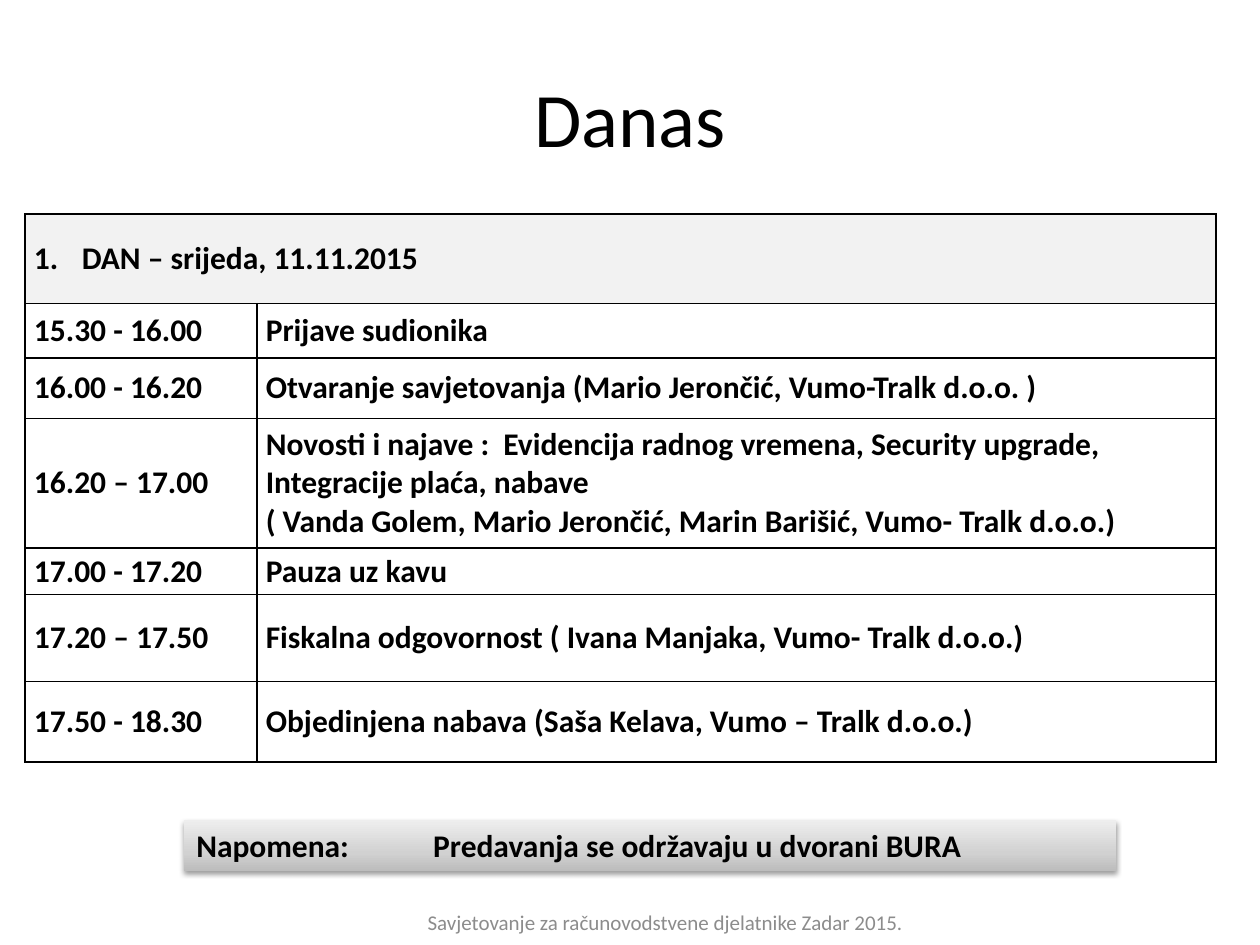
from copy import deepcopy

from lxml import etree
from pptx import Presentation
from pptx.dml.color import RGBColor
from pptx.enum import shapes, text
from pptx.oxml import ns
from pptx.util import Inches, Pt

FONT = "Calibri"
COLORS = {
    "text": "000000",
    "border": "000000",
    "footer": "8C8C8C",
    "day": "F2F2F2",
    "row": "FFFFFF",
}
NOTE_GRADIENT = [(0, "BDBDBD"), (0.35, "D1D1D1"), (1, "EEEEEE")]

DAY = "DAN – srijeda, 11.11.2015"
SESSIONS = [
    ("15.30 - 16.00", "Prijave sudionika", 0.43),
    ("16.00 - 16.20", "Otvaranje savjetovanja (Mario Jerončić, Vumo-Tralk d.o.o. )", 0.48),
    ("16.20 – 17.00",
     "Novosti i najave :  Evidencija radnog vremena, Security upgrade, "
     "Integracije plaća, nabave\n"
     "( Vanda Golem, Mario Jerončić, Marin Barišić, Vumo- Tralk d.o.o.)", 1.03),
    ("17.00 - 17.20", "Pauza uz kavu", 0.37),
    ("17.20 – 17.50", "Fiskalna odgovornost ( Ivana Manjaka, Vumo- Tralk d.o.o.)", 0.69),
    ("17.50 - 18.30", "Objedinjena nabava (Saša Kelava, Vumo – Tralk d.o.o.)", 0.64),
]
DAY_HEIGHT = 0.71
TIME_WIDTH = 1.84


def add_xml(parent, tag, **attributes):
    return etree.SubElement(parent, ns.qn(tag), attributes)


def set_font(paragraph, size, color="text", bold=False):
    font = paragraph.font
    font.name, font.size, font.bold = FONT, Pt(size), bold
    font.color.rgb = RGBColor.from_string(COLORS[color])


def add_tab(paragraph, position):
    tabs = add_xml(paragraph._p.get_or_add_pPr(), "a:tabLst")
    add_xml(tabs, "a:tab", pos=str(Inches(position)), algn="l")


def add_title(slide, left, top, width, height):
    title = slide.shapes.title
    title.left, title.top = Inches(left), Inches(top)
    title.width, title.height = Inches(width), Inches(height)
    title.text_frame.text = "Danas"
    title.text_frame.vertical_anchor = text.MSO_ANCHOR.MIDDLE
    heading = title.text_frame.paragraphs[0]
    heading.alignment = text.PP_ALIGN.CENTER
    set_font(heading, 44)


def add_borders(cell):
    properties = cell._tc.get_or_add_tcPr()
    for index, side in enumerate(("a:lnL", "a:lnR", "a:lnT", "a:lnB")):
        line = etree.Element(ns.qn(side), w=str(Pt(1)))
        fill = add_xml(line, "a:solidFill")
        add_xml(fill, "a:srgbClr", val=COLORS["border"])
        properties.insert(index, line)


def format_cell(cell, fill):
    cell.vertical_anchor = text.MSO_ANCHOR.MIDDLE
    cell.margin_left = cell.margin_right = Inches(0.07)
    cell.margin_top = cell.margin_bottom = 0
    cell.fill.solid()
    cell.fill.fore_color.rgb = RGBColor.from_string(COLORS[fill])
    add_borders(cell)
    for paragraph in cell.text_frame.paragraphs:
        set_font(paragraph, 18, bold=True)


def number_day(paragraph):
    properties = paragraph._p.get_or_add_pPr()
    properties.set("marL", str(Inches(0.38)))
    properties.set("indent", str(-Inches(0.38)))
    add_xml(properties, "a:buFont", typeface="+mj-lt")
    add_xml(properties, "a:buAutoNum", type="arabicPeriod")
    add_tab(paragraph, 0.5)


def add_schedule(slide, left, top, width):
    heights = [DAY_HEIGHT] + [height for _, _, height in SESSIONS]
    schedule = slide.shapes.add_table(
        len(heights), 2, Inches(left), Inches(top), Inches(width), Inches(sum(heights))
    ).table
    schedule.first_row = schedule.horz_banding = False
    schedule.columns[0].width = Inches(TIME_WIDTH)
    schedule.columns[1].width = Inches(width - TIME_WIDTH)
    for row, height in zip(schedule.rows, heights):
        row.height = Inches(height)

    day = schedule.cell(0, 0)
    day.merge(schedule.cell(0, 1))
    day.text = DAY
    number_day(day.text_frame.paragraphs[0])
    for row, (time, topic, _) in enumerate(SESSIONS, 1):
        schedule.cell(row, 0).text = time
        schedule.cell(row, 1).text = topic
    for index, row in enumerate(schedule.rows):
        for cell in row.cells:
            format_cell(cell, "row" if index else "day")


def fill_note(note):
    note.fill.gradient()
    note.fill.gradient_angle = 90
    stops = note._element.spPr.find(".//" + ns.qn("a:gsLst"))
    stops.append(deepcopy(stops[0]))
    for stop, (position, color) in zip(note.fill.gradient_stops, NOTE_GRADIENT):
        stop.position = position
        stop.color.rgb = RGBColor.from_string(color)


def add_note_shadow(note):
    note.shadow.inherit = False
    effects = note._element.spPr.find(ns.qn("a:effectLst"))
    shadow = add_xml(effects, "a:outerShdw", blurRad=str(Pt(3.1)), dist=str(Pt(1.6)),
                     dir="5400000", rotWithShape="0")
    color = add_xml(shadow, "a:srgbClr", val="000000")
    add_xml(color, "a:alpha", val="38000")


def add_note(slide, left, top, width, height):
    note = slide.shapes.add_shape(
        shapes.MSO_SHAPE.RECTANGLE, Inches(left), Inches(top), Inches(width), Inches(height)
    )
    fill_note(note)
    note.line.fill.background()
    add_note_shadow(note)
    frame = note.text_frame
    frame.word_wrap = True
    frame.vertical_anchor = text.MSO_ANCHOR.TOP
    frame.text = "Napomena:\tPredavanja se održavaju u dvorani BURA"
    remark = frame.paragraphs[0]
    remark.alignment = text.PP_ALIGN.LEFT
    add_tab(remark, 1.88)
    set_font(remark, 18, bold=True)


def add_footer(slide, left, top, width, height):
    footer = slide.shapes.add_textbox(Inches(left), Inches(top), Inches(width), Inches(height))
    frame = footer.text_frame
    frame.word_wrap = True
    frame.vertical_anchor = text.MSO_ANCHOR.MIDDLE
    frame.text = "Savjetovanje za računovodstvene djelatnike Zadar 2015."
    event = frame.paragraphs[0]
    event.alignment = text.PP_ALIGN.CENTER
    set_font(event, 12, "footer")


def main():
    deck = Presentation()
    deck.slide_width, deck.slide_height = Inches(10), Inches(7.5)
    slide = deck.slides.add_slide(deck.slide_layouts.get_by_name("Title Only"))
    add_footer(slide, 3.04, 7.12, 4.48, 0.4)
    add_title(slide, 0.5, 0.3, 9, 1.25)
    add_note(slide, 1.46, 6.51, 7.4, 0.4)
    add_schedule(slide, 0.2, 1.7, 9.45)
    deck.save("out.pptx")


if __name__ == "__main__":
    main()
